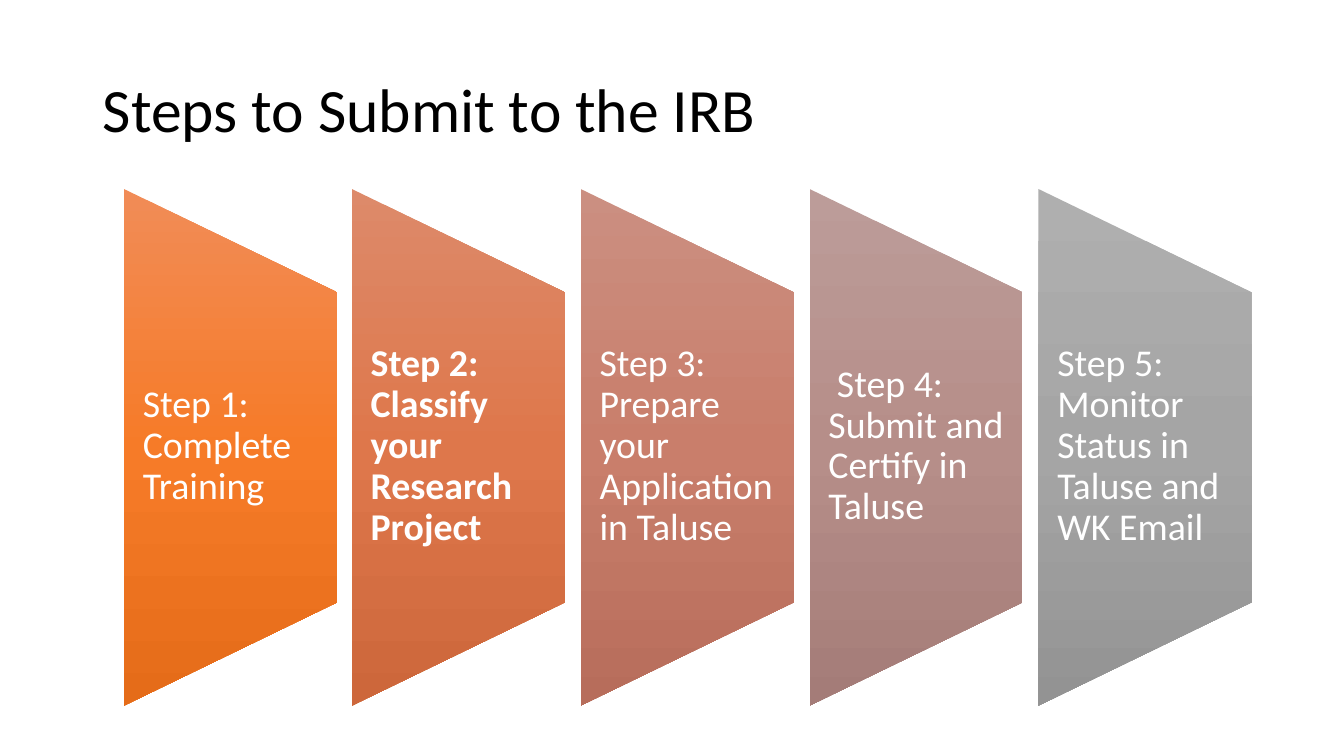
from dataclasses import dataclass

from pptx import Presentation
from pptx.dml.color import RGBColor
from pptx.enum.shapes import MSO_SHAPE
from pptx.enum.text import MSO_ANCHOR
from pptx.oxml import parse_xml
from pptx.oxml.ns import nsdecls
from pptx.util import Pt

PX = 9525
TRAPEZE = MSO_SHAPE.FLOWCHART_MANUAL_OPERATION
MIDDLE = MSO_ANCHOR.MIDDLE


@dataclass(frozen=True)
class Theme:
    """Hold the fonts, sizes and colours of the slide."""
    font: str = "Calibri"
    head: int = 44
    body: int = 27
    ink: str = "000000"
    pale: str = "FFFFFF"
    fades: tuple = (
        ("F18C57", "F67B28", "E56C19"),
        ("DD8A6A", "DE774B", "CD673B"),
        ("CB8F81", "C97E6B", "B76D5B"),
        ("BC9C99", "B68E89", "A47C78"),
        ("AFAFAF", "A5A5A5", "939393"),
    )


class Board:
    """Draw styled elements on one slide, with lengths in px."""

    def __init__(self, slide, theme):
        """Keep the slide and its theme."""
        self.slide = slide
        self.theme = theme

    def text(self, words, box, size, color, inset, bold=False):
        """Add a wrapped text box, centred in height."""
        item = self.slide.shapes.add_textbox(*(n * PX for n in box))
        frame = item.text_frame
        frame.word_wrap = True
        frame.vertical_anchor = MIDDLE
        frame.margin_left = frame.margin_right = inset * PX
        frame.margin_top = frame.margin_bottom = 0
        line = frame.paragraphs[0]
        line.text = words
        line.line_spacing = 0.9
        line.font.name = self.theme.font
        line.font.size = Pt(size)
        line.font.bold = bold
        line.font.color.rgb = RGBColor.from_string(color)

    def panel(self, left, top, width, height, fade):
        """Add an upright trapeze that narrows to the right."""
        shift = (height - width) * PX // 2
        shape = self.slide.shapes.add_shape(
            TRAPEZE, left * PX - shift, top * PX + shift,
            height * PX, width * PX)
        shape.rotation = 270
        shape.shadow.inherit = False
        shape.line.fill.background()
        stops = "".join(
            f'<a:gs pos="{i * 50000}"><a:srgbClr val="{color}"/></a:gs>'
            for i, color in enumerate(fade))
        shape.element.spPr.insert(2, parse_xml(
            f'<a:gradFill {nsdecls("a")} rotWithShape="0">'
            f'<a:gsLst>{stops}</a:gsLst>'
            '<a:lin ang="5400000" scaled="0"/></a:gradFill>'))


STEPS = (
    "Step 1: Complete Training",
    "Step 2: Classify your Research Project",
    "Step 3: Prepare your Application in Taluse",
    " Step 4: Submit and Certify in Taluse",
    "Step 5: Monitor Status in Taluse and WK Email",
)
ACTIVE = 1
LEFT, SPAN, WIDTH = 118, 871, 203


def main():
    """Build the slide and save it."""
    deck = Presentation()
    deck.slide_width = 1280 * PX
    deck.slide_height = 720 * PX
    theme = Theme()
    board = Board(deck.slides.add_slide(deck.slide_layouts[6]), theme)
    board.text("Steps to Submit to the IRB", (88, 38, 1104, 139),
               theme.head, theme.ink, 10)
    for i, (step, fade) in enumerate(zip(STEPS, theme.fades)):
        left = LEFT + SPAN * i // (len(STEPS) - 1)
        board.panel(left, 180, WIDTH, 492, fade)
        board.text(step, (left, 277, WIDTH, 296),
                   theme.body, theme.pale, 18, i == ACTIVE)
    deck.save("out.pptx")


if __name__ == "__main__":
    main()
